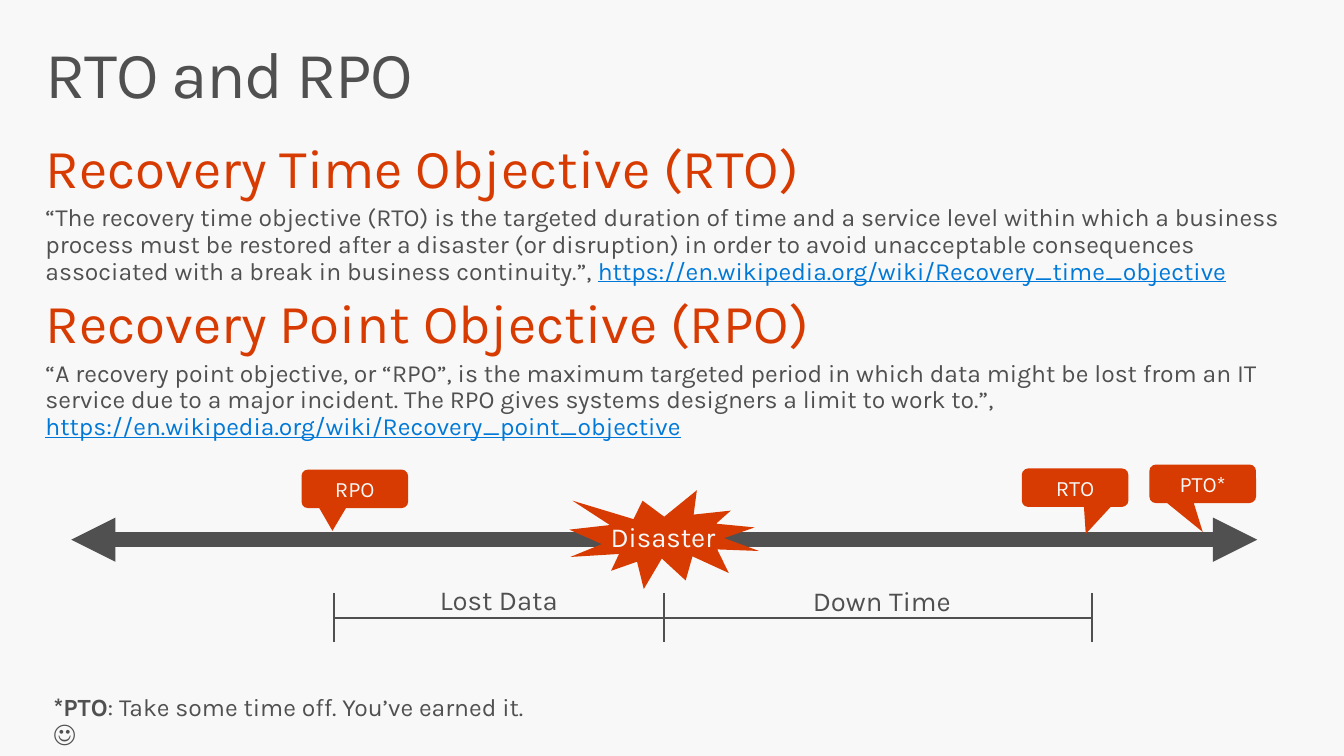
from dataclasses import dataclass

from lxml import etree
from pptx import Presentation
from pptx.dml.color import RGBColor
from pptx.enum.shapes import MSO_CONNECTOR, MSO_SHAPE
from pptx.enum.text import MSO_ANCHOR, PP_ALIGN
from pptx.oxml.ns import qn
from pptx.util import Cm, Pt

STRAIGHT = MSO_CONNECTOR.STRAIGHT
BURST = MSO_SHAPE.EXPLOSION1
CALLOUT = MSO_SHAPE.ROUNDED_RECTANGULAR_CALLOUT
LEFT, CENTER = PP_ALIGN.LEFT, PP_ALIGN.CENTER
TOP, MIDDLE = MSO_ANCHOR.TOP, MSO_ANCHOR.MIDDLE

FONT = "Karla"
GREY, ORANGE, BLUE, PALE = "505050", "D83B01", "0078D7", "F8F8F8"


@dataclass(frozen=True)
class Area:
    left: float
    top: float
    width: float
    height: float

    def lengths(self) -> list:
        return [Cm(value) for value in (self.left, self.top, self.width, self.height)]


@dataclass(frozen=True)
class Objective:
    heading: str
    quote: str
    link: str


@dataclass(frozen=True)
class Flag:
    text: str
    left: float
    top: float
    tip_x: float
    tip_y: float


@dataclass(frozen=True)
class Period:
    text: str
    area: Area


OBJECTIVES = [
    Objective(
        "Recovery Time Objective (RTO)",
        "“The recovery time objective (RTO) is the targeted duration of time and a "
        "service level within which a business process must be restored after a "
        "disaster (or disruption) in order to avoid unacceptable consequences "
        "associated with a break in business continuity.”, ",
        "https://en.wikipedia.org/wiki/Recovery_time_objective",
    ),
    Objective(
        "Recovery Point Objective (RPO)",
        "“A recovery point objective, or “RPO”, is the maximum targeted period in "
        "which data might be lost from an IT service due to a major incident. The "
        "RPO gives systems designers a limit to work to.”, ",
        "https://en.wikipedia.org/wiki/Recovery_point_objective",
    ),
]
FLAGS = [
    Flag("RPO", 7.75, 12.07, -0.21, 1.09),
    Flag("RTO", 26.26, 12.04, 0.1, 1.2),
    Flag("PTO*", 29.54, 11.94, 0, 1.25),
]
PERIODS = [
    Period("Lost Data", Area(8.59, 14.71, 8.46, 1.6)),
    Period("Down Time", Area(17.37, 14.73, 10.59, 1.6)),
]
MOMENTS = [8.59, 17.07, 28.07]
TICK_TOP, TICK_MIDDLE, TICK_BOTTOM = 15.24, 15.88, 16.51
TIMELINE_Y = 13.87


def rgb(color: str) -> RGBColor:
    return RGBColor.from_string(color)


def add_span(para, text: str, *, size: float, color: str = GREY, bold: bool = False,
             underline: bool = False, tracking: int = 0) -> None:
    span = para.add_run()
    span.text = text
    span.font.name = FONT
    span.font.size = Pt(size)
    span.font.color.rgb = rgb(color)
    span.font.bold = bold
    span.font.underline = underline
    if tracking:
        span.font._element.set("spc", str(tracking))


def format_para(para, *, align=LEFT, leading: float = 0.9,
                before: float = 0, after: float = 0):
    para.alignment = align
    para.line_spacing = leading
    para.space_before = Pt(before)
    para.space_after = Pt(after)
    return para


def set_frame(frame, inset_x: float, inset_y: float, anchor=TOP):
    frame.word_wrap = True
    frame.vertical_anchor = anchor
    frame.margin_left = frame.margin_right = Cm(inset_x)
    frame.margin_top = frame.margin_bottom = Cm(inset_y)
    return frame


def add_box(page, area: Area, inset_x: float, inset_y: float):
    box = page.shapes.add_textbox(*area.lengths())
    return set_frame(box.text_frame, inset_x, inset_y)


def add_badge(page, kind, area: Area, text: str, size: float):
    badge = page.shapes.add_shape(kind, *area.lengths())
    badge.shadow.inherit = False
    badge.fill.solid()
    badge.fill.fore_color.rgb = rgb(ORANGE)
    badge.line.fill.background()
    frame = set_frame(badge.text_frame, 0, 0.13, MIDDLE)
    para = format_para(frame.paragraphs[0], align=CENTER, leading=1.0)
    add_span(para, text, size=size, color=PALE)
    return badge


def add_line(page, x1: float, y1: float, x2: float, y2: float,
             width: float = 1.5, arrows: bool = False) -> None:
    line = page.shapes.add_connector(STRAIGHT, Cm(x1), Cm(y1), Cm(x2), Cm(y2))
    line.line.color.rgb = rgb(GREY)
    line.line.width = Pt(width)
    if arrows:
        for end in ("a:headEnd", "a:tailEnd"):
            etree.SubElement(line.line._get_or_add_ln(), qn(end), type="triangle")
    etree.SubElement(line._element.spPr, qn("a:effectLst"))


def add_objectives(page) -> None:
    frame = add_box(page, Area(0.76, 3.38, 33.02, 8.64), 0.41, 0.25)
    for index, objective in enumerate(OBJECTIVES):
        para = frame.add_paragraph() if index else frame.paragraphs[0]
        format_para(para, before=8 if index else 0)
        add_span(para, objective.heading, size=40, color=ORANGE)
        para = format_para(frame.add_paragraph(), before=3.6)
        add_span(para, objective.quote, size=18)
        add_span(para, objective.link, size=18, color=BLUE, underline=True)


def add_timeline(page) -> None:
    add_line(page, 1.83, TIMELINE_Y, 32.31, TIMELINE_Y, width=10.75, arrows=True)
    add_badge(page, BURST, Area(14.63, 12.6, 4.88, 2.54), "Disaster", 20)
    for period in PERIODS:
        frame = add_box(page, period.area, 0.51, 0.41)
        para = format_para(frame.paragraphs[0], align=CENTER, after=6)
        add_span(para, period.text, size=20)
    for moment in MOMENTS:
        add_line(page, moment, TICK_TOP, moment, TICK_BOTTOM)
    for start, end in zip(MOMENTS, MOMENTS[1:]):
        add_line(page, start, TICK_MIDDLE, end, TICK_MIDDLE)
    for flag in FLAGS:
        badge = add_badge(page, CALLOUT, Area(flag.left, flag.top, 2.74, 0.99), flag.text, 16)
        badge.adjustments[0] = flag.tip_x
        badge.adjustments[1] = flag.tip_y


def main() -> None:
    deck = Presentation()
    deck.slide_width, deck.slide_height = Cm(34.54), Cm(19.43)
    page = deck.slides.add_slide(deck.slide_layouts[6])
    page.background.fill.solid()
    page.background.fill.fore_color.rgb = rgb(PALE)

    title = add_box(page, Area(0.76, 0.81, 33.02, 2.54), 0.41, 0.25)
    add_span(format_para(title.paragraphs[0]), "RTO and RPO", size=48, tracking=-100)
    add_objectives(page)
    add_timeline(page)

    footnote = add_box(page, Area(1.12, 17.73, 13.26, 0.94), 0.25, 0.13)
    para = format_para(footnote.paragraphs[0], after=6)
    add_span(para, "*PTO", size=18, bold=True)
    add_span(para, ": Take some time off. You’ve earned it. ☺", size=18)
    deck.save("out.pptx")


if __name__ == "__main__":
    main()
